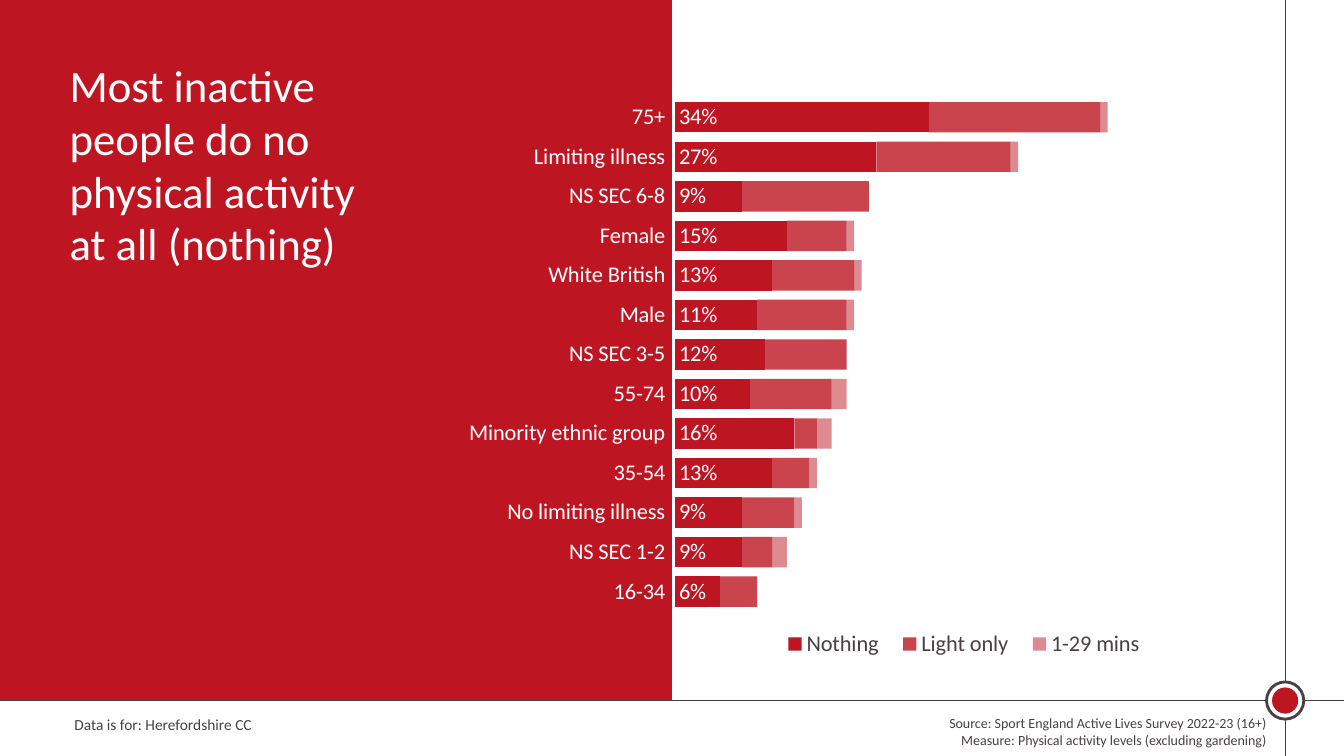
from pptx import Presentation
from pptx.chart.data import CategoryChartData
from pptx.dml.color import RGBColor as RGB
from pptx.enum.chart import XL_CHART_TYPE as Kind, XL_LABEL_POSITION as Spot
from pptx.enum.chart import XL_LEGEND_POSITION as Side, XL_TICK_MARK as Tick
from pptx.enum.shapes import MSO_CONNECTOR as Link, MSO_SHAPE as Form
from pptx.enum.text import MSO_ANCHOR as Anchor, MSO_AUTO_SIZE as Fit, PP_ALIGN as Align
from pptx.oxml import parse_xml
from pptx.oxml.ns import nsdecls, qn
from pptx.util import Pt

TITLE = "Most inactive people do no physical activity at all (nothing)"
AREA = ["Data is for: Herefordshire CC"]
SOURCE = [
    "Source: Sport England Active Lives Survey 2022-23 (16+)",
    "Measure: Physical activity levels (excluding gardening)",
]
SERIES = ("Nothing", "Light only", "1-29 mins")
ROWS = [
    ("75+", 0.34, 0.23, 0.01),
    ("Limiting illness", 0.27, 0.18, 0.01),
    ("NS SEC 6-8", 0.09, 0.17, 0),
    ("Female", 0.15, 0.08, 0.01),
    ("White British", 0.13, 0.11, 0.01),
    ("Male", 0.11, 0.12, 0.01),
    ("NS SEC 3-5", 0.12, 0.11, 0),
    ("55-74", 0.10, 0.11, 0.02),
    ("Minority ethnic group", 0.16, 0.03, 0.02),
    ("35-54", 0.13, 0.05, 0.01),
    ("No limiting illness", 0.09, 0.07, 0.01),
    ("NS SEC 1-2", 0.09, 0.04, 0.02),
    ("16-34", 0.06, 0.05, 0),
]


class Theme:
    font = "Calibri"
    red = RGB.from_string("BD1622")
    grey = RGB.from_string("484043")
    white = RGB.from_string("FFFFFF")
    title, chart, area, source = 32, 16, 11, 10
    alphas = (100, 80, 50)


WIDE, HIGH = 960, 540
CROSS_X, CROSS_Y = 918, 500.4


def style(font, size, color):
    font.name, font.size = Theme.font, Pt(size)
    font.color.rgb = color


def add_form(slide, form, box, fill, line=None):
    shape = slide.shapes.add_shape(form, *map(Pt, box))
    shape.shadow.inherit = False
    shape.fill.solid()
    shape.fill.fore_color.rgb = fill
    if line:
        shape.line.color.rgb = Theme.grey
        shape.line.width = Pt(line)
    else:
        shape.line.fill.background()


def add_rule(slide, *ends):
    rule = slide.shapes.add_connector(Link.STRAIGHT, *map(Pt, ends))
    rule.line.color.rgb = Theme.grey
    rule.line.width = Pt(0.5)
    rule.element.spPr.append(parse_xml(f"<a:effectLst {nsdecls('a')}/>"))


def add_dot(slide, size, fill, line=None):
    """Centre a circle where the two rules cross."""
    box = (CROSS_X - size / 2, CROSS_Y - size / 2, size, size)
    add_form(slide, Form.OVAL, box, fill, line)


def add_note(slide, box, lines, size, align):
    frame = slide.shapes.add_textbox(*map(Pt, box)).text_frame
    frame.word_wrap = True
    frame.text = "\n".join(lines)
    for para in frame.paragraphs:
        para.alignment = align
        style(para.font, size, Theme.grey)


def set_title(slide):
    title = slide.shapes.title
    title.left, title.top, title.width, title.height = map(Pt, (42.5, 39.6, 241, 244))
    frame = title.text_frame
    frame.text = TITLE
    frame.word_wrap = True
    frame.auto_size = Fit.NONE
    frame.vertical_anchor = Anchor.TOP
    para = frame.paragraphs[0]
    para.alignment = Align.LEFT
    para.line_spacing = 0.98
    style(para.font, Theme.title, Theme.white)
    # The title stands in front of the red panel.
    slide.shapes.element.append(title.element)


def layout(x, y, w, h, inner=False):
    """Manual chart layout, in shares of the chart's size."""
    target = '<c:layoutTarget val="inner"/>' if inner else ""
    modes = '<c:xMode val="edge"/><c:yMode val="edge"/>'
    sizes = "".join(
        f'<c:{key} val="{val}"/>' for key, val in zip("xywh", (x, y, w, h))
    )
    return parse_xml(
        f"<c:layout {nsdecls('c')}><c:manualLayout>"
        f"{target}{modes}{sizes}</c:manualLayout></c:layout>"
    )


def place_parts(chart):
    area = chart.element.find(".//" + qn("c:plotArea"))
    legend = chart.element.find(".//" + qn("c:legend"))
    for part in (area, legend):
        for old in part.findall(qn("c:layout")):
            part.remove(old)
    area.insert(0, layout(0.38, 0.03, 0.62, 0.87, True))
    legend.find(qn("c:legendPos")).addnext(layout(0.48, 0.92, 0.4, 0.07))


def paint(chart):
    """Fill every series red, each one fainter than the last."""
    for series in chart.plots[0].series:
        series.format.fill.solid()
        series.format.fill.fore_color.rgb = Theme.red
    tints = chart.element.findall(
        "/".join((".//" + qn("c:ser"), qn("c:spPr"), qn("a:solidFill"), qn("a:srgbClr")))
    )
    for tint, alpha in zip(tints, Theme.alphas):
        if alpha < 100:
            tint.append(parse_xml(f'<a:alpha {nsdecls("a")} val="{alpha * 1000}"/>'))


def add_bars(slide):
    data = CategoryChartData(number_format="0%")
    names, *columns = zip(*ROWS)
    data.categories = names
    for name, vals in zip(SERIES, columns):
        data.add_series(name, vals)
    box = map(Pt, (221, 57, 687.5, 422))
    chart = slide.shapes.add_chart(Kind.BAR_STACKED, *box, data).chart
    chart.has_title = False
    style(chart.font, Theme.chart, Theme.white)

    cats = chart.category_axis
    cats.reverse_order = True
    cats.major_tick_mark = Tick.OUTSIDE
    cats.format.line.fill.background()
    style(cats.tick_labels.font, Theme.chart, Theme.white)
    axis = chart.value_axis
    axis.minimum_scale, axis.maximum_scale = 0, 0.8
    axis.has_major_gridlines = False
    axis.visible = False

    plot = chart.plots[0]
    plot.gap_width, plot.overlap = 30, 100
    plot.vary_by_categories = False
    paint(chart)
    labels = plot.series[0].data_labels
    labels.show_value = True
    labels.position = Spot.INSIDE_BASE
    labels.number_format, labels.number_format_is_linked = "0%", False
    style(labels.font, Theme.chart, Theme.white)

    chart.has_legend = True
    chart.legend.position = Side.BOTTOM
    chart.legend.include_in_layout = False
    style(chart.legend.font, Theme.chart, Theme.grey)
    place_parts(chart)


def main():
    deck = Presentation()
    deck.slide_width, deck.slide_height = Pt(WIDE), Pt(HIGH)
    slide = deck.slides.add_slide(deck.slide_layouts[5])
    add_note(slide, (46, 507, 261, 21), AREA, Theme.area, Align.LEFT)
    add_form(slide, Form.RECTANGLE, (0, 0, WIDE / 2, CROSS_Y), Theme.red)
    add_rule(slide, CROSS_X, 0, CROSS_X, HIGH)
    add_rule(slide, 0, CROSS_Y, WIDE, CROSS_Y)
    add_dot(slide, 26.6, Theme.white, 2)
    add_dot(slide, 18.7, Theme.red)
    add_note(slide, (446, 507, 465.5, 32), SOURCE, Theme.source, Align.RIGHT)
    set_title(slide)
    add_bars(slide)
    deck.save("out.pptx")


if __name__ == "__main__":
    main()
